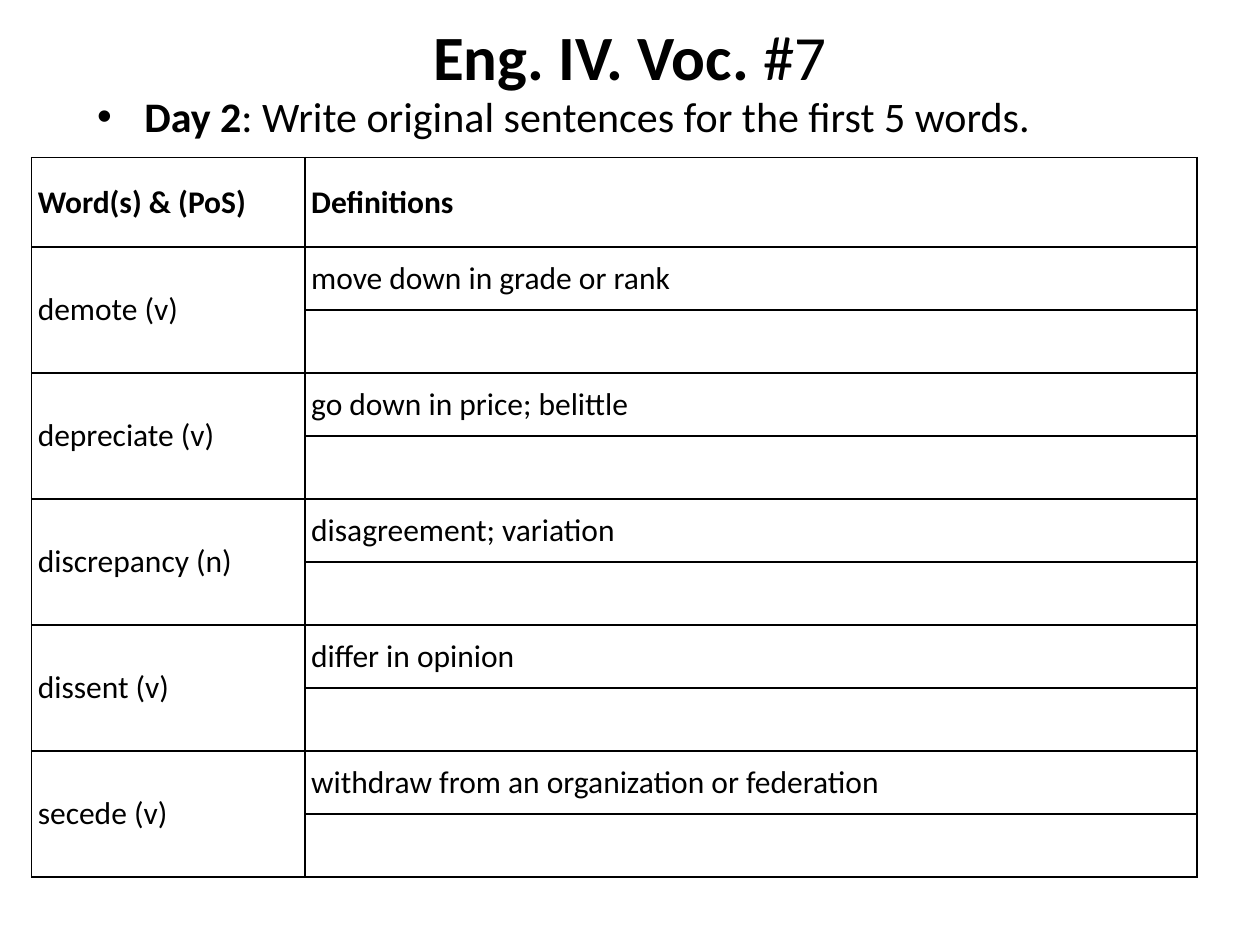
"""Build a vocabulary slide with a table of words and definitions."""
from dataclasses import dataclass
from typing import NamedTuple

from lxml.etree import SubElement
from pptx import Presentation
from pptx.dml.color import RGBColor
from pptx.enum.text import MSO_ANCHOR, MSO_AUTO_SIZE, PP_ALIGN
from pptx.oxml.ns import qn
from pptx.util import Inches, Pt


@dataclass(frozen=True)
class Theme:
    """Colours, font and type sizes of the slide."""
    font: str = "Calibri"
    ink: RGBColor = RGBColor(0, 0, 0)
    paper: RGBColor = RGBColor(255, 255, 255)
    title: Pt = Pt(36)
    body: Pt = Pt(24)
    cell: Pt = Pt(18)
    border: Pt = Pt(1)


class Entry(NamedTuple):
    """A vocabulary word and its definition."""
    word: str
    definition: str


class Box(NamedTuple):
    """A position and size in inches."""
    left: float
    top: float
    width: float
    height: float


THEME = Theme()
ENTRIES = [
    Entry("demote (v)", "move down in grade or rank"),
    Entry("depreciate (v)", "go down in price; belittle"),
    Entry("discrepancy (n)", "disagreement; variation"),
    Entry("dissent (v)", "differ in opinion"),
    Entry("secede (v)", "withdraw from an organization or federation"),
]


def apply(obj, formats: dict) -> None:
    """Set each format value on an object."""
    for name, value in formats.items():
        setattr(obj, name, value)


def add_run(p, text: str, size: Pt, bold: bool) -> None:
    """Add a formatted run to a paragraph."""
    r = p.add_run()
    r.text = text
    apply(r.font, {"name": THEME.font, "size": size, "bold": bold})
    r.font.color.rgb = THEME.ink


def fill_placeholder(sp, box: Box, lead: str, rest: str, size: Pt):
    """Place a placeholder, write a bold lead and plain rest, return its paragraph."""
    apply(sp, {k: Inches(v) for k, v in box._asdict().items()})
    tf = sp.text_frame
    apply(tf, {"word_wrap": True, "auto_size": MSO_AUTO_SIZE.NONE})
    p = tf.paragraphs[0]
    add_run(p, lead, size, True)
    add_run(p, rest, size, False)
    return p


def format_cell(cell) -> None:
    """Give a cell its margins, anchor, borders and fill."""
    apply(cell, {
        "margin_left": Inches(0.05), "margin_right": Inches(0.05),
        "margin_top": 0, "margin_bottom": 0,
        "vertical_anchor": MSO_ANCHOR.MIDDLE,
    })
    tcPr = cell._tc.get_or_add_tcPr()
    for side in ("lnL", "lnR", "lnT", "lnB"):
        ln = SubElement(tcPr, qn(f"a:{side}"), w=str(THEME.border))
        line_fill = SubElement(ln, qn("a:solidFill"))
        SubElement(line_fill, qn("a:srgbClr"), val=str(THEME.ink))
    cell.fill.solid()
    cell.fill.fore_color.rgb = THEME.paper


def write_cell(cell, text: str, bold: bool = False) -> None:
    """Write text into a table cell."""
    add_run(cell.text_frame.paragraphs[0], text, THEME.cell, bold)


def add_vocabulary(s, box: Box, entries: list[Entry]) -> None:
    """Add the table, with a blank answer row below each definition."""
    rows = 1 + 2 * len(entries)
    table = s.shapes.add_table(rows, 2, *map(Inches, box)).table
    apply(table, {"first_row": False, "horz_banding": False})
    for col, width in zip(table.columns, (2.17, 7.08)):
        col.width = Inches(width)
    for i, row in enumerate(table.rows):
        row.height = Inches(0.5 if i else 0.71)
    for cell in table.iter_cells():
        format_cell(cell)
    write_cell(table.cell(0, 0), "Word(s) & (PoS)", True)
    write_cell(table.cell(0, 1), "Definitions", True)
    for i, entry in enumerate(entries):
        top = 1 + 2 * i
        table.cell(top, 0).merge(table.cell(top + 1, 0))
        write_cell(table.cell(top, 0), entry.word)
        write_cell(table.cell(top, 1), entry.definition)


def main() -> None:
    """Build and save the slide."""
    prs = Presentation()
    apply(prs, {"slide_width": Inches(10), "slide_height": Inches(7.5)})
    s = prs.slides.add_slide(prs.slide_layouts[1])
    p = fill_placeholder(s.shapes.title, Box(0.5, 0, 9, 0.87),
                         "Eng. IV. Voc. ", "#7", THEME.title)
    p.alignment = PP_ALIGN.CENTER
    fill_placeholder(s.placeholders[1], Box(0.67, 0.67, 9, 0.5), "Day 2",
                     ": Write original sentences for the first 5 words.", THEME.body)
    add_vocabulary(s, Box(0.25, 1.25, 9.25, 5.71), ENTRIES)
    prs.save("out.pptx")


if __name__ == "__main__":
    main()
